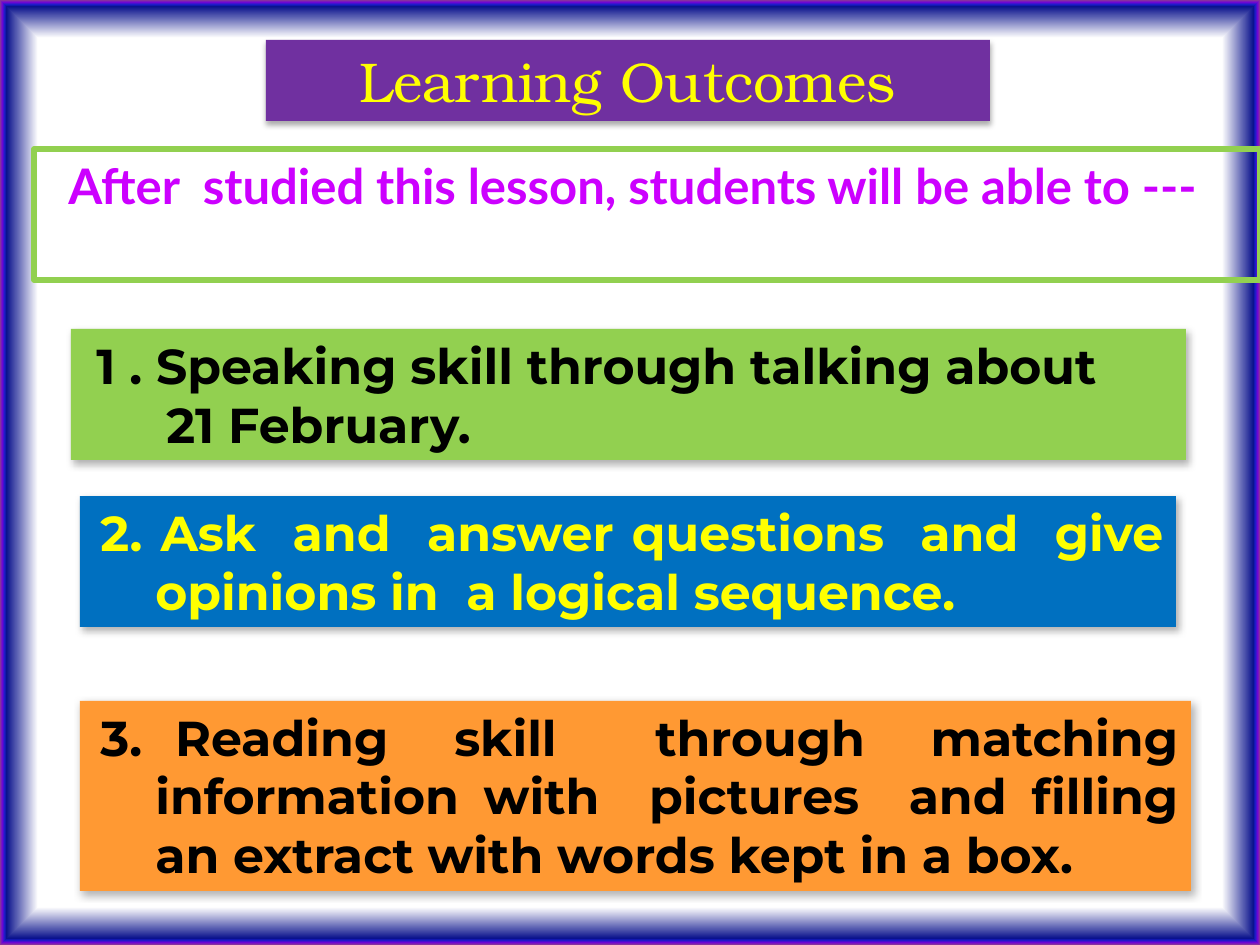
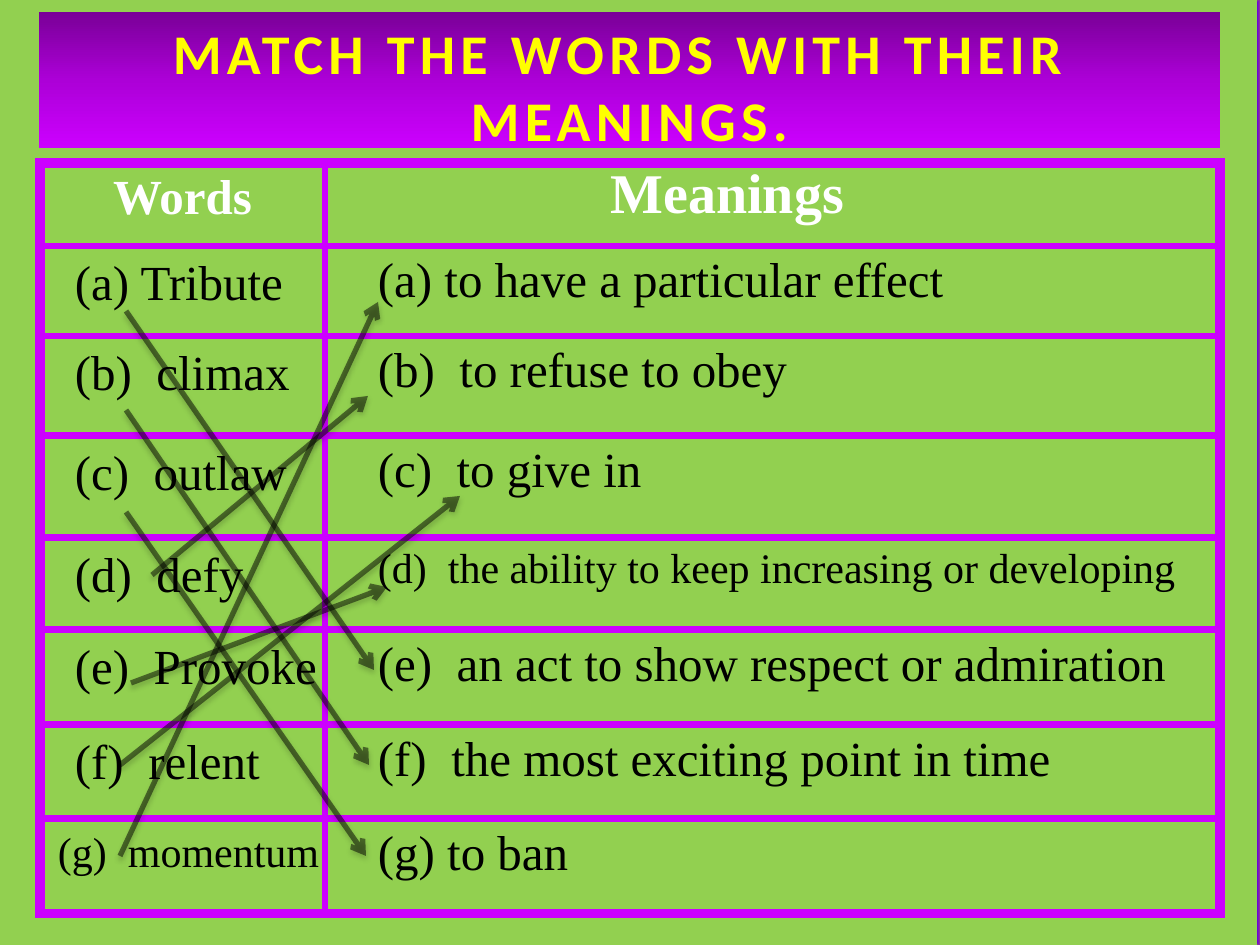
from lxml.etree import SubElement
from pptx import Presentation
from pptx.dml.color import RGBColor
from pptx.enum.shapes import MSO_CONNECTOR, MSO_SHAPE
from pptx.enum.text import MSO_ANCHOR, MSO_AUTO_SIZE, PP_ALIGN
from pptx.oxml.ns import qn
from pptx.util import Emu, Pt

GREEN, PURPLE, YELLOW, MAGENTA = "92D050", "7030A0", "FFFF00", "CC00FF"
BLUE, ORANGE, BLACK, WHITE = "0070C0", "FF9933", "000000", "FFFFFF"
SERIF = "Times New Roman"
TITLE_SHADOW = (32, 3.5, 2.2, 90)
BOX_SHADOW = (30, 4.5, 2.6, 53)
ARROW_SHADOW = (35, 3.1, 1.8, 90)


def px(n):
    return Emu(round(n * 914400 / 126))


def rgb(hex_color):
    return RGBColor.from_string(hex_color)


def add(parent, tag, **attrs):
    return SubElement(parent, qn(tag), {k: str(v) for k, v in attrs.items()})


def gradient(fill, owner, stops):
    fill.gradient()
    grad = next(owner.iter(qn("a:gradFill")))
    for child in list(grad):
        grad.remove(child)
    gs_list = add(grad, "a:gsLst")
    for pos, color in stops:
        add(add(gs_list, "a:gs", pos=round(pos * 1000)), "a:srgbClr", val=color)
    return grad


class Deck:
    """Holds the shared style and the current slide."""

    def __init__(self):
        self.prs = Presentation()
        self.prs.slide_width, self.prs.slide_height = px(1260), px(945)
        self.slide = None
        master = self.prs.slide_master
        grad = gradient(master.background.fill, master.element, [
            (92, WHITE), (98.6, "0A128C"), (99, "181CC7"),
            (99.5, "7005D4"), (100, "8C3D91")])
        add(add(grad, "a:path", path="shape"), "a:fillToRect",
            l=50000, t=50000, r=50000, b=50000)

    def new_slide(self):
        self.slide = self.prs.slides.add_slide(self.prs.slide_layouts[5])

    def set_text(self, tf, text, size, font, color, bold=False,
                 align=PP_ALIGN.LEFT, indents=((0, 0),), spacing=0):
        tf.text = text
        for p, (margin, first) in zip(tf.paragraphs, indents):
            p.alignment = align
            pPr = p._p.get_or_add_pPr()
            pPr.set("marL", str(px(margin)))
            pPr.set("indent", str(px(first)))
            for r in p.runs:
                r.font.size, r.font.name, r.font.bold = Pt(size), font, bold
                r.font.color.rgb = rgb(color)
                if spacing:
                    r._r.get_or_add_rPr().set("spc", str(spacing * 100))

    def shadow(self, sp, alpha, blur, dist, angle):
        effects = add(sp.element.spPr, "a:effectLst")
        outer = add(effects, "a:outerShdw", blurRad=Pt(blur), dist=Pt(dist),
                    dir=angle * 60000, algn="ctr", rotWithShape=0)
        add(add(outer, "a:srgbClr", val=BLACK), "a:alpha", val=alpha * 1000)

    def title(self, text, left, top, width, height, font, bold=False, spacing=0):
        sp = self.slide.shapes.title
        sp.left, sp.top, sp.width, sp.height = map(px, (left, top, width, height))
        tf = sp.text_frame
        self.set_text(tf, text, 32, font, YELLOW, bold, PP_ALIGN.CENTER,
                      spacing=spacing)
        tf.word_wrap, tf.auto_size = True, MSO_AUTO_SIZE.NONE
        tf.vertical_anchor = MSO_ANCHOR.TOP
        return sp

    def box(self, left, top, width, height, fill=None, line=None, shadow=None):
        sp = self.slide.shapes.add_shape(
            MSO_SHAPE.RECTANGLE, px(left), px(top), px(width), px(height))
        if fill:
            sp.fill.solid()
            sp.fill.fore_color.rgb = rgb(fill)
        else:
            sp.fill.background()
        if line:
            sp.line.color.rgb, sp.line.width = rgb(line), Pt(3)
        else:
            sp.line.fill.background()
        if shadow:
            self.shadow(sp, *shadow)
        else:
            sp.shadow.inherit = False
        sp.text_frame.word_wrap = True
        sp.text_frame.vertical_anchor = MSO_ANCHOR.TOP
        return sp

    def outcome(self, text, left, top, width, height, fill, color, indents):
        sp = self.box(left, top, width, height, fill, shadow=BOX_SHADOW)
        self.set_text(sp.text_frame, text, 28, "Montserrat", color, True,
                      PP_ALIGN.JUSTIFY, indents)

    def arrow(self, x1, y1, x2, y2):
        cx = self.slide.shapes.add_connector(
            MSO_CONNECTOR.STRAIGHT, px(x1), px(y1), px(x2), px(y2))
        cx.line.color.rgb, cx.line.width = rgb(BLACK), Pt(3)
        add(next(cx.element.iter(qn("a:srgbClr"))), "a:alpha", val=50000)
        add(next(cx.element.iter(qn("a:ln"))), "a:tailEnd", type="arrow")
        self.shadow(cx, *ARROW_SHADOW)

    def table(self, left, row_edges, widths):
        rows, cols = len(row_edges) - 1, len(widths)
        table = self.slide.shapes.add_table(
            rows, cols, px(left), px(row_edges[0]), px(sum(widths)),
            px(row_edges[-1] - row_edges[0])).table
        table.first_row = table.horz_banding = False
        for col, width in zip(table.columns, widths):
            col.width = px(width)
        for i, row in enumerate(table.rows):
            row.height = px(row_edges[i + 1] - row_edges[i])
            for j, cell in enumerate(row.cells):
                outer = {"L": j == 0, "R": j == cols - 1,
                         "T": i == 0, "B": i == rows - 1}
                tcPr = cell._tc.get_or_add_tcPr()
                for side, is_outer in outer.items():
                    ln = add(tcPr, f"a:ln{side}", w=Pt(6 if is_outer else 4.5))
                    add(add(ln, "a:solidFill"), "a:srgbClr", val=MAGENTA)
                cell.fill.solid()
                cell.fill.fore_color.rgb = rgb(GREEN)
        return table

    def cell(self, cell, text, size, margins, color=BLACK, bold=False,
             align=PP_ALIGN.LEFT):
        cell.margin_left, cell.margin_top, cell.margin_right = map(px, margins)
        cell.margin_bottom = 0
        self.set_text(cell.text_frame, text, size, SERIF, color, bold, align)


def learning_outcomes(deck):
    deck.new_slide()
    sp = deck.title("Learning Outcomes", 266, 40, 724, 81, "TeX Gyre Bonum")
    sp.fill.solid()
    sp.fill.fore_color.rgb = rgb(PURPLE)
    deck.shadow(sp, *TITLE_SHADOW)

    hanging = ((63, -55),)
    deck.outcome("1 . Speaking skill through talking about\n21 February.",
                 71, 329, 1115, 131, GREEN, BLACK, ((13, 0), (83, 0)))
    deck.outcome("3. Reading  skill   through  matching information with  pictures  "
                 "and filling an extract with words kept in a box.",
                 80, 701, 1111, 190, ORANGE, BLACK, hanging)
    deck.outcome("2. Ask  and  answer questions  and  give opinions in  a logical "
                 "sequence.", 80, 496, 1096, 131, BLUE, YELLOW, hanging)

    intro = deck.box(34, 149, 1226, 131, line=GREEN)
    deck.set_text(intro.text_frame,
                  "After  studied this lesson, students will be able to ---",
                  28, "Lato", MAGENTA, True, indents=((22, 0),))


def match_words(deck):
    deck.new_slide()
    backdrop = deck.box(0, 0, 1257, 945, GREEN)
    title = deck.title("MATCH THE WORDS WITH THEIR  MEANINGS.",
                       39, 12, 1181, 136, "Calibri", True, 3)
    title.element.addprevious(backdrop.element)
    grad = gradient(title.fill, title.element,
                    [(0, "790097"), (50, "AC00D7"), (100, MAGENTA)])
    add(grad, "a:lin", ang=5400000, scaled=0)

    pairs = [
        ("(a) Tribute", "(a) to have a particular effect"),
        ("(b)  climax", "(b)  to refuse to obey"),
        ("(c)  outlaw", "(c)  to give in"),
        ("(d)  defy", "(d)  the ability to keep increasing or developing"),
        ("(e)  Provoke", "(e)  an act to show respect or admiration"),
        ("(f)  relent", "(f)  the most exciting point in time"),
        ("(g)  momentum", "(g) to ban"),
    ]
    small = {"(g)  momentum", pairs[3][1]}
    table = deck.table(40, [163, 246, 336, 436, 538, 630, 725, 819, 914], [285, 895])
    deck.cell(table.cell(0, 0), "Words", 28, (0, 8, 0), WHITE, True, PP_ALIGN.CENTER)
    deck.cell(table.cell(0, 1), "Meanings", 32, (0, 0, 90), WHITE, True,
              PP_ALIGN.CENTER)
    for i, (word, meaning) in enumerate(pairs, 1):
        word_left = 18 if word in small else 35
        for j, (text, left, top) in enumerate([(word, word_left, 11), (meaning, 53, 8)]):
            deck.cell(table.cell(i, j), text, 24 if text in small else 28,
                      (left, top, 0))

    for ends in [(126, 311, 374, 670), (126, 410, 369, 765), (126, 512, 366, 856),
                 (152, 575, 368, 396), (120, 856, 378, 302), (131, 683, 387, 587),
                 (120, 765, 460, 496)]:
        deck.arrow(*ends)


def main():
    deck = Deck()
    learning_outcomes(deck)
    match_words(deck)
    deck.prs.save("out.pptx")


if __name__ == "__main__":
    main()
